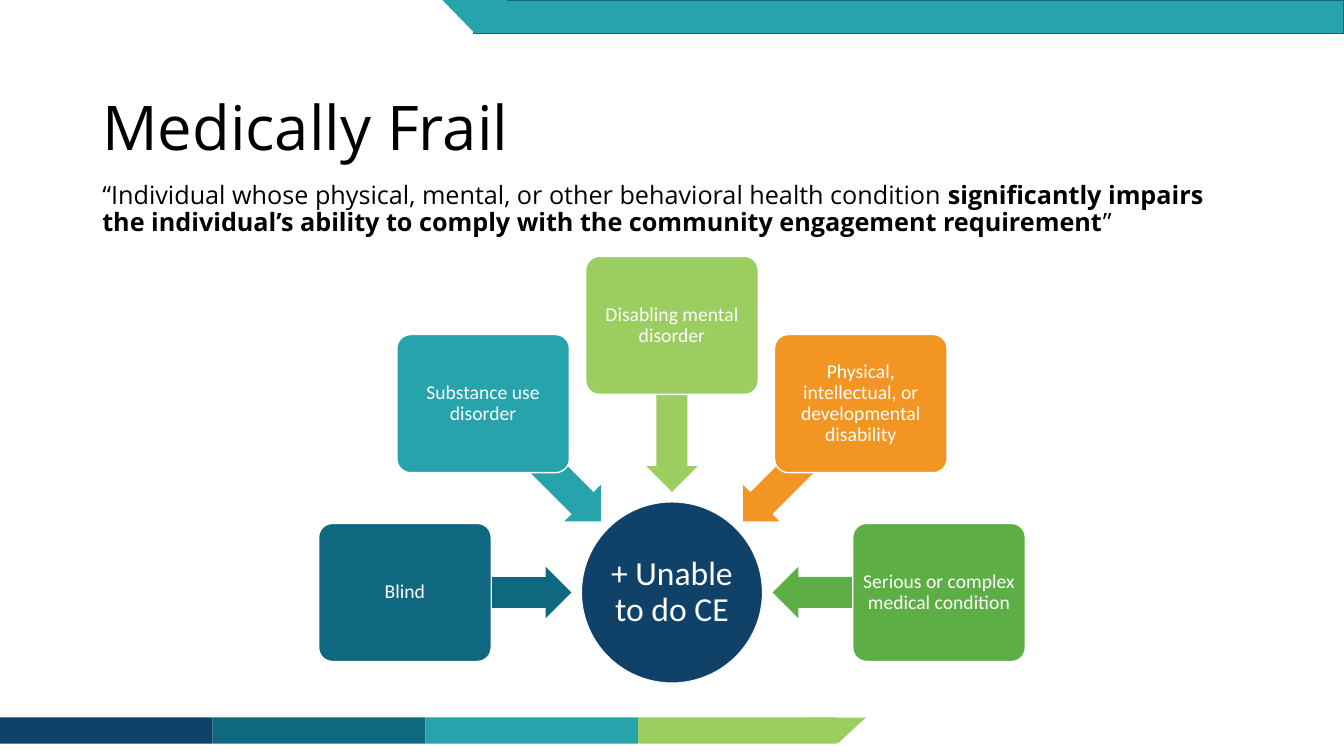
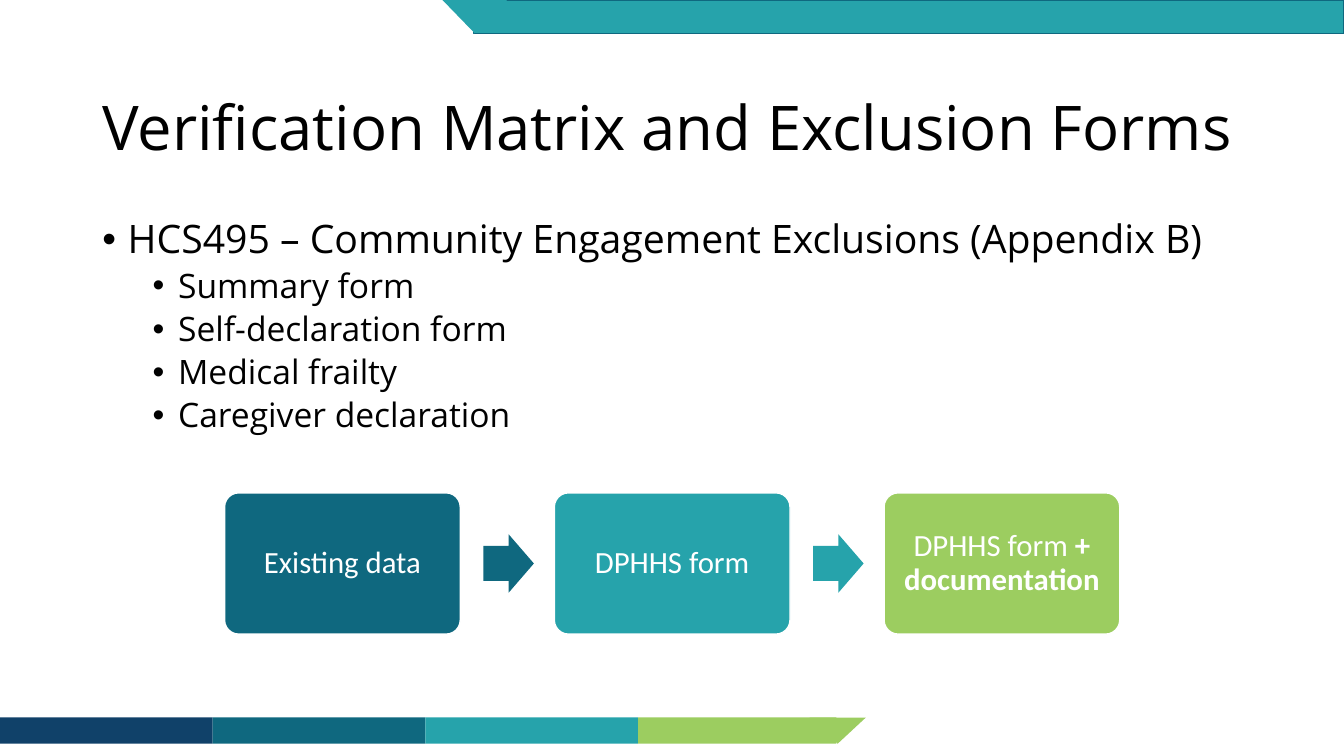
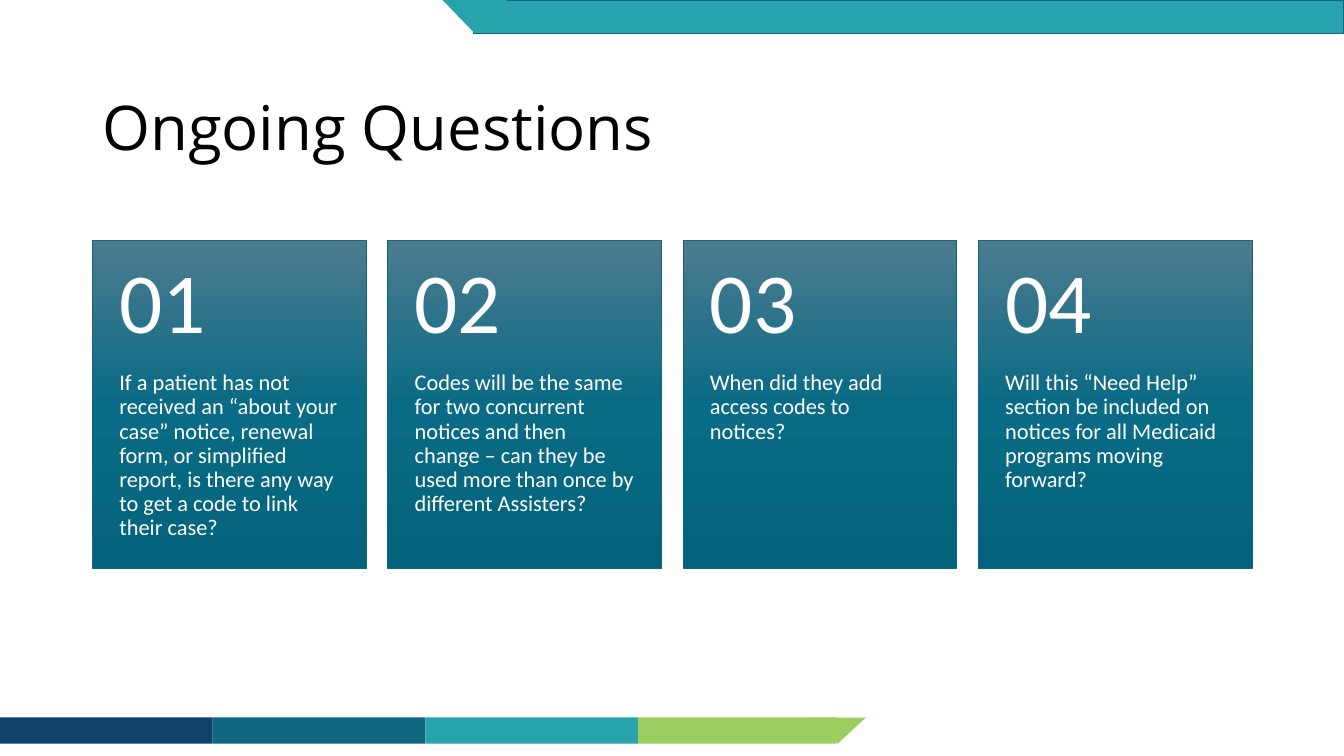
import math
from dataclasses import dataclass

from lxml import etree
from pptx import Presentation
from pptx import util as u
from pptx.dml import color
from pptx.enum import shapes, text
from pptx.oxml import ns

COLORS = {
    "navy": "104169",
    "petrol": "0F687F",
    "teal": "26A3AB",
    "lime": "9CCD60",
    "orange": "F29523",
    "green": "5EAE46",
    "white": "FFFFFF",
    "black": "000000",
}
CARD_GRADIENT = ((0, "4C7B8F"), (50, "096B85"), (100, "03627B"))
HEADING_FONT = "Open Sans"
DIAGRAM_FONT = "Calibri"
SLIDE_WIDTH, SLIDE_HEIGHT = 33.87, 19.05
MARGIN, CONTENT_WIDTH = 2.33, 29.21
TEXT_INSETS = (0.25, 0.13, 0.25, 0.13)

Kind = shapes.MSO_SHAPE
Anchor = text.MSO_ANCHOR
Align = text.PP_ALIGN


@dataclass(frozen=True)
class Area:
    left: float
    top: float
    width: float
    height: float

    @classmethod
    def centered(cls, x: float, y: float, width: float, height: float) -> "Area":
        return cls(x - width / 2, y - height / 2, width, height)

    def lengths(self) -> tuple:
        return tuple(u.Cm(value) for value in (self.left, self.top, self.width, self.height))


@dataclass(frozen=True)
class Span:
    words: str
    bold: bool = False


@dataclass(frozen=True)
class Node:
    spans: tuple[Span, ...]
    fill: str


@dataclass(frozen=True)
class Band:
    kind: Kind
    area: Area
    fill: str
    line: str | None = None
    rotation: int = 0


FOOTER_TOP, FOOTER_HEIGHT, FOOTER_STEP = 18.08, 0.66, 5.36
HEADER_HEIGHT = 0.84
BANDS = [
    *(
        Band(Kind.RECTANGLE, Area(index * FOOTER_STEP, FOOTER_TOP, width, FOOTER_HEIGHT), fill)
        for index, (fill, width) in enumerate(
            (("navy", FOOTER_STEP), ("petrol", FOOTER_STEP), ("teal", FOOTER_STEP), ("lime", 5))
        )
    ),
    Band(Kind.ISOSCELES_TRIANGLE, Area(20.4, FOOTER_TOP, 1.42, FOOTER_HEIGHT), "lime", rotation=180),
    Band(Kind.RECTANGLE, Area(11.94, 0, 21.93, HEADER_HEIGHT), "teal", "petrol"),
    Band(Kind.ISOSCELES_TRIANGLE, Area(11.15, 0, 1.63, HEADER_HEIGHT), "teal", rotation=180),
]


def rgb(name: str) -> color.RGBColor:
    return color.RGBColor.from_string(COLORS[name])


def add_figure(page, kind: Kind, area: Area, fill: str, *, line: str | None = None,
               line_width: float = 1, rotation: float = 0, adjust: tuple = ()):
    figure = page.shapes.add_shape(kind, *area.lengths())
    figure.shadow.inherit = False
    figure.fill.solid()
    figure.fill.fore_color.rgb = rgb(fill)
    if line:
        figure.line.color.rgb = rgb(line)
        figure.line.width = u.Pt(line_width)
    else:
        figure.line.fill.background()
    figure.rotation = rotation
    for index, value in enumerate(adjust):
        figure.adjustments[index] = value
    return figure


def set_frame(box, insets: tuple = TEXT_INSETS, anchor: Anchor = Anchor.TOP) -> None:
    frame = box.text_frame
    frame.word_wrap = True
    frame.vertical_anchor = anchor
    sides = (u.Cm(value) for value in insets)
    frame.margin_left, frame.margin_top, frame.margin_right, frame.margin_bottom = sides


def add_box(page, area: Area, insets: tuple = TEXT_INSETS, anchor: Anchor = Anchor.TOP):
    box = page.shapes.add_textbox(*area.lengths())
    set_frame(box, insets, anchor)
    return box


def write(box, content: str | tuple[Span, ...], *, size: float, font: str = DIAGRAM_FONT,
          ink: str = "white", align: Align = Align.LEFT, level: int = 0,
          before: float = 0, bullet_margin: float | None = None) -> None:
    frame = box.text_frame
    first = frame.paragraphs[0]
    para = frame.add_paragraph() if first.runs else first
    if bullet_margin is not None:
        properties = para._p.get_or_add_pPr()
        properties.set("marL", str(u.Cm(bullet_margin)))
        properties.set("indent", str(-u.Cm(0.64)))
        etree.SubElement(properties, ns.qn("a:buFont"), typeface="Arial")
        etree.SubElement(properties, ns.qn("a:buChar"), char="•")
    para.level = level
    para.alignment = align
    para.line_spacing = 0.9
    para.space_before = u.Pt(before)
    for span in (Span(content),) if isinstance(content, str) else content:
        run = para.add_run()
        run.text = span.words
        run.font.name = font
        run.font.size = u.Pt(size)
        run.font.bold = span.bold
        run.font.color.rgb = rgb(ink)


def add_page(deck, title: str):
    page = deck.slides.add_slide(deck.slide_layouts[6])
    for band in BANDS:
        add_figure(page, band.kind, band.area, band.fill, line=band.line, rotation=band.rotation)
    box = add_box(page, Area(MARGIN, 1.45, CONTENT_WIDTH, 3.68), anchor=Anchor.MIDDLE)
    write(box, title, size=44, font=HEADING_FONT, ink="black")
    return page


def add_node(page, kind: Kind, area: Area, node: Node, size: float, inset: float,
             adjust: tuple = ()) -> None:
    figure = add_figure(page, kind, area, node.fill, line="white", adjust=adjust)
    set_frame(figure, (inset,) * 4, Anchor.MIDDLE)
    write(figure, node.spans, size=size, align=Align.CENTER)


def build_medically_frail(deck) -> None:
    page = add_page(deck, "Medically Frail")
    box = add_box(page, Area(MARGIN, 4.47, CONTENT_WIDTH, 1.8))
    definition = (
        Span("“Individual whose physical, mental, or other behavioral health condition "),
        Span("significantly impairs the individual’s ability to comply with the "
             "community engagement requirement", True),
        Span("”"),
    )
    write(box, definition, size=18, font=HEADING_FONT, ink="black")

    hub_x, hub_y = SLIDE_WIDTH / 2, 14.93
    hub = Node((Span("+ Unable to do CE"),), "navy")
    add_node(page, Kind.OVAL, Area.centered(hub_x, hub_y, 4.57, 4.57), hub, 24, 0.06)

    conditions = (
        ("Blind", "petrol"),
        ("Substance use disorder", "teal"),
        ("Disabling mental disorder", "lime"),
        ("Physical, intellectual, or developmental disability", "orange"),
        ("Serious or complex medical condition", "green"),
    )
    for index, (label, fill) in enumerate(conditions):
        angle = 180 + 45 * index
        across, down = math.cos(math.radians(angle)), math.sin(math.radians(angle))
        arrow = Area.centered(hub_x + 4.63 * across, hub_y + 4.63 * down, 4.19, 1.3)
        add_figure(page, Kind.LEFT_ARROW, arrow, fill, rotation=angle % 360, adjust=(0.6, 0.5))
        area = Area.centered(hub_x + 6.73 * across, hub_y + 6.73 * down, 4.35, 3.48)
        add_node(page, Kind.ROUNDED_RECTANGLE, area, Node((Span(label),), fill), 14, 0.08, (0.1,))


def build_verification(deck) -> None:
    page = add_page(deck, "Verification Matrix and Exclusion Forms")
    box = add_box(page, Area(MARGIN, 5.41, CONTENT_WIDTH, 6.5))
    body = {"font": HEADING_FONT, "ink": "black"}
    write(box, "HCS495 – Community Engagement Exclusions (Appendix B)",
          size=28, bullet_margin=0.64, **body)
    for form in ("Summary form", "Self-declaration form", "Medical frailty",
                 "Caregiver declaration"):
        write(box, form, size=24, level=1, before=5, bullet_margin=1.91, **body)

    steps = (
        Node((Span("Existing data"),), "petrol"),
        Node((Span("DPHHS form"),), "teal"),
        Node((Span("DPHHS form "), Span("+ documentation", True)), "lime"),
    )
    top, width, height, pitch = 12.42, 5.94, 3.56, 8.31
    for index, step in enumerate(steps):
        left = 5.66 + index * pitch
        add_node(page, Kind.ROUNDED_RECTANGLE, Area(left, top, width, height), step, 22, 0.22, (0.1,))
        if index < len(steps) - 1:
            arrow = Area.centered(left + 7.16, top + height / 2, 1.27, 1.47)
            add_figure(page, Kind.RIGHT_ARROW, arrow, step.fill, adjust=(0.6, 0.5))


def fill_gradient(figure, stops: tuple) -> None:
    figure.fill.gradient()
    figure.fill.gradient_angle = 270
    stop_list = figure._element.spPr.find(".//" + ns.qn("a:gsLst"))
    for stop in list(stop_list):
        stop_list.remove(stop)
    for percent, value in stops:
        stop = etree.SubElement(stop_list, ns.qn("a:gs"), pos=str(percent * 1000))
        etree.SubElement(stop, ns.qn("a:srgbClr"), val=value)


def build_questions(deck) -> None:
    page = add_page(deck, "Ongoing Questions")
    questions = (
        "If a patient has not received an “about your case” notice, renewal form, or "
        "simplified report, is there any way to get a code to link their case?",
        "Codes will be the same for two concurrent notices and then change – can they be "
        "used more than once by different Assisters?",
        "When did they add access codes to notices?",
        "Will this “Need Help” section be included on notices for all Medicaid programs "
        "moving forward?",
    )
    top, width, height, number_height, pitch = 6.06, 6.9, 8.26, 3.3, 7.44
    for index, question in enumerate(questions):
        left = MARGIN + index * pitch
        card = add_figure(page, Kind.RECTANGLE, Area(left, top, width, height), "petrol",
                          line="petrol", line_width=0.5)
        fill_gradient(card, CARD_GRADIENT)
        set_frame(card, (0.68, number_height, 0.68, 0.3))
        write(card, question, size=16)
        number = add_box(page, Area(left, top, width, number_height),
                         (0.68, 0.46, 0.68, 0.46), Anchor.MIDDLE)
        write(number, f"{index + 1:02d}", size=61)


def main() -> None:
    deck = Presentation()
    deck.slide_width, deck.slide_height = u.Cm(SLIDE_WIDTH), u.Cm(SLIDE_HEIGHT)
    build_medically_frail(deck)
    build_verification(deck)
    build_questions(deck)
    deck.save("out.pptx")


if __name__ == "__main__":
    main()
